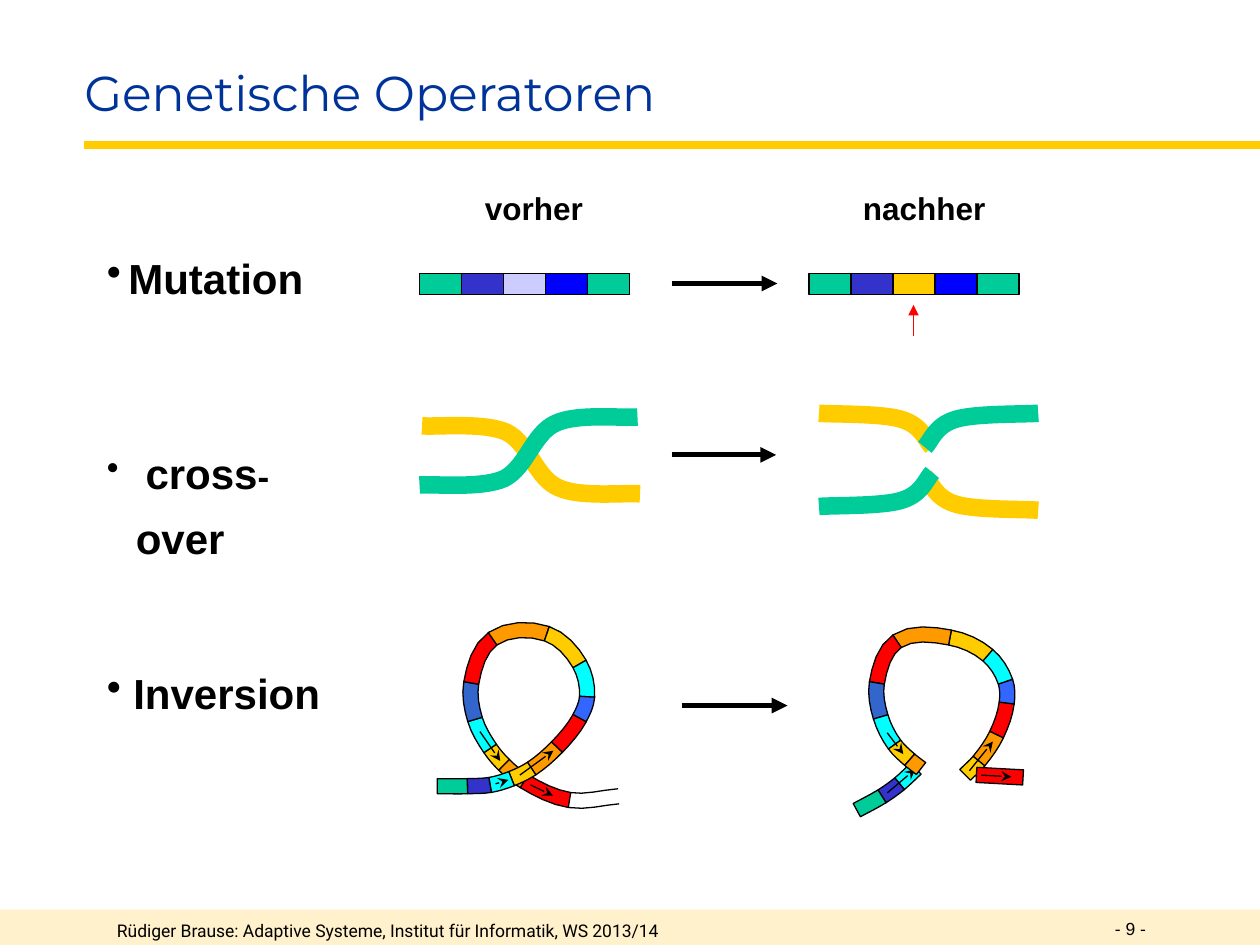
from lxml import etree
from pptx import Presentation
from pptx.dml.color import RGBColor
from pptx.enum.shapes import MSO_CONNECTOR, MSO_SHAPE
from pptx.oxml.ns import qn
from pptx.util import Inches, Pt

LINE, RECT = MSO_CONNECTOR.STRAIGHT, MSO_SHAPE.RECTANGLE

THEME = {
    "black": "000000", "title": "003399", "band": "FFE499", "gold": "FFCC00",
    "green": "00CC99", "violet": "3333CC", "lilac": "CCCCFF", "blue": "0000FF",
    "red": "FF0000", "orange": "FF9900", "cyan": "00FFFF", "steel": "3366CC",
    "azure": "3366FF",
    "title_font": "Montserrat", "body_font": "Arial", "footer_font": "Roboto",
    "title_size": 28, "item_size": 24, "head_size": 18, "hyphen_size": 20,
    "footer_size": 10, "thin": 0.75, "arrow": 3, "rule": 4.5, "strand": 10,
}

# Text: box, font, colour, paragraphs; runs are (text, size), None is a line break
TEXTS = [
    ((0.83, 7.25, 5.42, 0.25), "footer_font", "black", [
        {"runs": [("Rüdiger Brause: Adaptive Systeme, Institut für Informatik, WS 2013/14", "footer_size")]}]),
    ((8.75, 7.24, 0.75, 0.26), "body_font", "black", [{"runs": [("- 9 -", "footer_size")]}]),
    ((0.67, 0.45, 7.24, 0.55), "title_font", "title", [{"runs": [("Genetische Operatoren", "title_size")]}]),
    ((0.75, 1.39, 9.25, 1.3), "body_font", "black", [
        {"runs": [("\tvorher\tnachher", "head_size")], "tabs": (3, 6), "bold": True,
         "format": {"line_spacing": 1.2, "space_after": Pt(9)}},
        {"runs": [("Mutation", "item_size")], "indent": 0.17, "bold": True, "format": {"line_spacing": 1.2}}]),
    ((0.75, 3.38, 2.14, 1.15), "body_font", "black", [
        {"runs": [(" ", "hyphen_size"), ("cross", "item_size"), ("-", "hyphen_size"), None, ("over", "item_size")],
         "indent": 0.23, "bold": True, "format": {"line_spacing": 1.3}}]),
    ((0.75, 5.13, 1.89, 0.62), "body_font", "black", [
        {"runs": [("Inversion", "item_size")], "indent": 0.21, "bold": True, "format": {"line_spacing": 1.3}}]),
]

# Mutation: left edge of each chromosome and its gene colours
GENE_W, GENE_H, GENE_TOP = 1 / 3, 0.17, 2.17
CHROMOSOMES = [
    (3.33, ("green", "violet", "lilac", "blue", "green")),
    (6.42, ("green", "violet", "gold", "blue", "green")),
]

# Cross-over: two Bézier shapes from (0, 0), placed as colour, shape, x, y, x flip, y flip
WHOLE = [(0, 0), (0.11, 0.01), (0.49, -0.03), (0.67, 0.05), (0.85, 0.14),
         (0.9, 0.41), (1.08, 0.49), (1.25, 0.57), (1.59, 0.53), (1.73, 0.54)]
HALF = [(0, 0), (0.11, 0.01), (0.51, 0), (0.66, 0.05), (0.82, 0.1), (0.85, 0.22), (0.9, 0.27)]
STRANDS = [
    ("gold", WHOLE, 3.35, 3.38, 1, 1), ("green", WHOLE, 3.33, 3.85, 1, -1),
    ("gold", HALF, 8.24, 4.05, -1, -1), ("green", HALF, 6.5, 4.02, 1, -1),
    ("gold", HALF, 6.5, 3.28, 1, 1), ("green", HALF, 8.24, 3.28, -1, 1),
]

# Inversion: a ribbon is gene colours, the joints between its genes, and
# arrows from one position to another (2.5 is halfway along gene 2)
RIBBON_W, STEPS = 0.12, 4
START = ["green", "violet", "cyan"]
RING = ["gold", "orange", "red", "azure", "cyan", "gold",
        "orange", "red", "steel", "cyan", "gold", "orange"]
END = ["red"]
BARE = [None]
RIBBONS = [
    # Before: one ribbon that crosses itself
    (START + RING + END + BARE,
     [(3.47, 6.24), (3.71, 6.24), (3.89, 6.23), (4.06, 6.18), (4.22, 6.1), (4.42, 5.93),
      (4.6, 5.7), (4.66, 5.53), (4.6, 5.27), (4.34, 5.03), (3.91, 5.07), (3.74, 5.42),
      (3.77, 5.71), (3.89, 5.94), (4, 6.07), (4.16, 6.2), (4.52, 6.35), (4.91, 6.32)],
     [(2.25, 2.85), (3.4, 4.85), (12.4, 13.75), (15.15, 15.65)]),
    # After: the ring is reversed between its two cut ends
    (START, [(6.8, 6.43), (7, 6.32), (7.14, 6.22), (7.27, 6.1)], [(1.3, 2.95)]),
    (RING[::-1],
     [(7.31, 6.1), (7.22, 6.03), (7.1, 5.91), (6.99, 5.69), (6.96, 5.42), (7.12, 5.09),
      (7.54, 5.06), (7.84, 5.2), (7.98, 5.41), (7.99, 5.58), (7.91, 5.83), (7.77, 6.04), (7.66, 6.15)],
     [(2.45, 1.4), (11.7, 10.25)]),
    (END, [(7.75, 6.15), (8.12, 6.17)], [(0.1, 0.75)]),
]

# Arrows: x1, y1, x2, y2
STEP_ARROWS = [(5.33, 2.25, 6.17, 2.25), (5.33, 3.61, 6.16, 3.61), (5.41, 5.6, 6.25, 5.6)]
MUTATION_ARROW = (7.25, 2.67, 7.25, 2.42)

prs = Presentation()
prs.slide_width, prs.slide_height = Inches(10), Inches(7.5)
s = prs.slides.add_slide(prs.slide_layouts[6])


def rgb(name):
    return RGBColor.from_string(THEME[name])


def style(sp, fill=None, line="black", width="thin"):
    sp.shadow.inherit = False
    if fill:
        sp.fill.solid()
        sp.fill.fore_color.rgb = rgb(fill)
    else:
        sp.fill.background()
    if line:
        sp.line.color.rgb, sp.line.width = rgb(line), Pt(THEME[width])
    else:
        sp.line.fill.background()


def rect(box, fill, line="black"):
    sp = s.shapes.add_shape(RECT, *map(Inches, box))
    style(sp, fill, line)
    return sp


def freeform(points, closed=False):
    pts = [(Inches(x), Inches(y)) for x, y in points]
    fb = s.shapes.build_freeform(*pts[0])
    fb.add_line_segments(pts[1:], close=closed)
    return fb.convert_to_shape()


def curve(points, color, width):
    """Turn each three line steps of a freeform into one Bézier step."""
    sp = freeform(points)
    steps = list(sp._element.iter(qn("a:lnTo")))
    for triple in zip(steps[::3], steps[1::3], steps[2::3]):
        bezier = etree.Element(qn("a:cubicBezTo"))
        triple[0].addprevious(bezier)
        for step in triple:
            bezier.append(step[0])
            step.getparent().remove(step)
    style(sp, None, color, width)


def line(ends, color, width, head=None):
    c = s.shapes.add_connector(LINE, *map(Inches, ends))
    c.line.color.rgb, c.line.width = rgb(color), Pt(THEME[width])
    if head:
        etree.SubElement(c.line._get_or_add_ln(), qn("a:tailEnd"), type=head)
    etree.SubElement(c._element.spPr, qn("a:effectLst"))


def on_ribbon(joints, position, side=0):
    """Point on a smooth curve through the joints; side -1 or 1 is an edge."""
    z = [complex(*joint) for joint in joints]
    chords = [b - a for a, b in zip(z, z[1:])]
    units = [c / abs(c) for c in chords]
    turns = [a + b for a, b in zip(units[:1] + units, units + units[-1:])]
    i = min(int(position), len(chords) - 1)
    t = position - i
    m0, m1 = (abs(chords[i]) * d / abs(d) for d in turns[i:i + 2])
    # Cubic Hermite curve and its tangent
    centre = z[i] + t * m0 + t**2 * (3 * chords[i] - 2 * m0 - m1) + t**3 * (m0 + m1 - 2 * chords[i])
    tangent = m0 + 2 * t * (3 * chords[i] - 2 * m0 - m1) + 3 * t**2 * (m0 + m1 - 2 * chords[i])
    point = centre + side * RIBBON_W / 2 * 1j * tangent / abs(tangent)
    return point.real, point.imag


def ribbon(colors, joints, arrows):
    # Later genes go first, so that the ribbon's start lies on top at a crossing
    for i, color in reversed(list(enumerate(colors))):
        left, right = ([on_ribbon(joints, i + k / STEPS, side) for k in range(STEPS + 1)] for side in (-1, 1))
        if color:
            style(freeform(left + right[::-1], True), color)
        else:
            for edge in (left, right):
                style(freeform(edge))
    for start, end in arrows:
        line(on_ribbon(joints, start) + on_ribbon(joints, end), "black", "thin", "stealth")


def text(box, font, color, paragraphs):
    tf = s.shapes.add_textbox(*map(Inches, box)).text_frame
    tf.word_wrap = True
    if font == "title_font":
        tf.margin_left = 0
    for i, para in enumerate(paragraphs):
        p = tf.paragraphs[0] if i == 0 else tf.add_paragraph()
        for name, value in para.get("format", {}).items():
            setattr(p, name, value)
        pPr = p._p.get_or_add_pPr()
        if "indent" in para:
            indent = Inches(para["indent"])
            pPr.set("marL", str(indent))
            pPr.set("indent", str(-indent))
            etree.SubElement(pPr, qn("a:buChar"), char="•")
        if "tabs" in para:
            tabs = etree.SubElement(pPr, qn("a:tabLst"))
            for pos in para["tabs"]:
                etree.SubElement(tabs, qn("a:tab"), pos=str(Inches(pos)), algn="l")
        for run in para["runs"]:
            if run is None:
                p.add_line_break()
                continue
            r = p.add_run()
            r.text = run[0]
            r.font.name, r.font.size = THEME[font], Pt(THEME[run[1]])
            r.font.bold, r.font.color.rgb = para.get("bold", False), rgb(color)


# Footer band, title rule and all text
band = rect((0, 7.22, 10, 0.28), "band", None)
etree.SubElement(next(band._element.spPr.iter(qn("a:srgbClr"))), qn("a:alpha"), val="50000")
line((0.67, 1.15, 10, 1.15), "gold", "rule")
for item in TEXTS:
    text(*item)

# Mutation
for left, colors in CHROMOSOMES:
    for i, color in enumerate(colors):
        rect((left + i * GENE_W, GENE_TOP, GENE_W, GENE_H), color)
line(MUTATION_ARROW, "red", "thin", "triangle")

# Cross-over
for color, shape, x, y, flip_x, flip_y in STRANDS:
    curve([(x + flip_x * dx, y + flip_y * dy) for dx, dy in shape], color, "strand")

# Inversion
for item in RIBBONS:
    ribbon(*item)

# Arrows from before to after
for ends in STEP_ARROWS:
    line(ends, "black", "arrow", "triangle")

prs.save("out.pptx")
